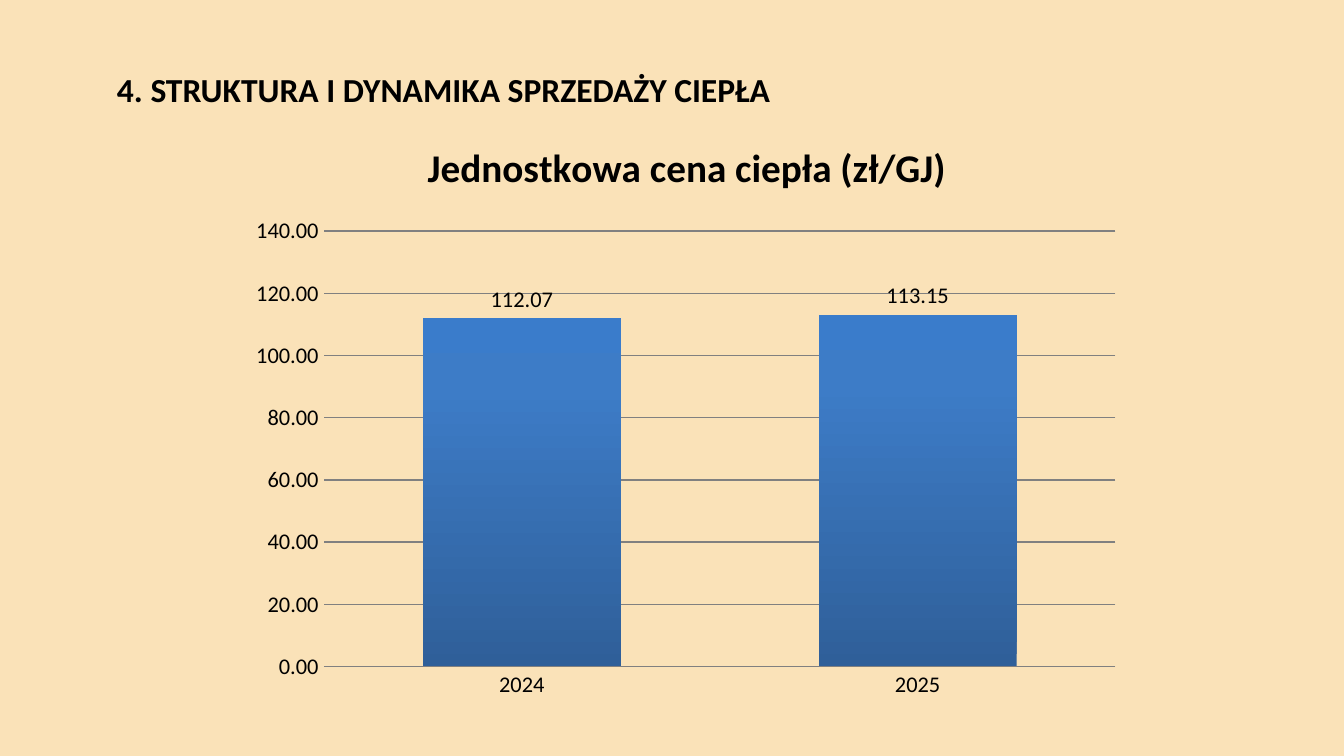
import copy

import pptx
import pptx.chart.data
import pptx.dml.color
import pptx.enum.chart
import pptx.enum.text
import pptx.oxml
import pptx.oxml.ns
import pptx.util
from pptx.util import Inches

FONT = "Calibri"
COLORS = {
    "background": "FAE2B8",
    "text": "000000",
    "line": "808080",
    "bar_bottom": "2F5F99",
    "bar_middle": "3D7CC7",
    "bar_top": "3A7CCB",
}


def color(name):
    return pptx.dml.color.RGBColor.from_string(COLORS[name])


def format_font(font, size, bold=False):
    font.name = FONT
    font.size = pptx.util.Pt(size)
    font.bold = bold
    font.color.rgb = color("text")


def format_line(line):
    line.color.rgb = color("line")
    line.width = pptx.util.Pt(0.75)


def set_layout(parent, index, **settings):
    for layout in parent.findall(pptx.oxml.ns.qn("c:layout")):
        parent.remove(layout)
    namespace = pptx.oxml.ns.nsdecls("c")
    entries = "".join(f'<c:{key} val="{value}"/>' for key, value in settings.items())
    parent.insert(index, pptx.oxml.parse_xml(
        f"<c:layout {namespace}><c:manualLayout>{entries}</c:manualLayout></c:layout>"
    ))


def add_heading(slide, left, top, width, height):
    title = slide.shapes.title
    title.left, title.top, title.width, title.height = map(
        Inches, (left, top, width, height)
    )
    frame = title.text_frame
    frame.text = "4. STRUKTURA I DYNAMIKA SPRZEDAŻY CIEPŁA"
    frame.word_wrap = True
    frame.auto_size = pptx.enum.text.MSO_AUTO_SIZE.NONE
    frame.vertical_anchor = pptx.enum.text.MSO_ANCHOR.TOP
    frame.margin_left = frame.margin_right = Inches(0.09)
    frame.margin_top = frame.margin_bottom = Inches(0.04)
    paragraph = frame.paragraphs[0]
    paragraph.alignment = pptx.enum.text.PP_ALIGN.LEFT
    format_font(paragraph.font, 18, bold=True)


def fill_bars(series):
    fill = series.format.fill
    fill.gradient()
    fill.gradient_angle = 90
    stop_list = series._element.find(".//" + pptx.oxml.ns.qn("a:gsLst"))
    stop_list.append(copy.deepcopy(stop_list[-1]))
    stops = (("bar_bottom", 0), ("bar_middle", 0.8), ("bar_top", 1))
    for stop, (name, position) in zip(fill.gradient_stops, stops):
        stop.color.rgb = color(name)
        stop.position = position


def format_axes(chart):
    for axis in (chart.category_axis, chart.value_axis):
        axis.major_tick_mark = pptx.enum.chart.XL_TICK_MARK.NONE
        axis.minor_tick_mark = pptx.enum.chart.XL_TICK_MARK.NONE
        format_font(axis.tick_labels.font, 12)
    format_line(chart.category_axis.format.line)
    value_axis = chart.value_axis
    value_axis.minimum_scale = 0
    value_axis.maximum_scale = 140
    value_axis.major_unit = 20
    value_axis.tick_labels.number_format = "0.00"
    value_axis.tick_labels.number_format_is_linked = False
    value_axis.format.line.fill.background()
    format_line(value_axis.major_gridlines.format.line)


def add_price_chart(slide, left, top, width, height):
    data = pptx.chart.data.CategoryChartData(number_format="0.00")
    data.categories = ["2024", "2025"]
    data.add_series("Series 1", (112.07, 113.15))
    chart = slide.shapes.add_chart(
        pptx.enum.chart.XL_CHART_TYPE.COLUMN_CLUSTERED,
        *map(Inches, (left, top, width, height)),
        data,
    ).chart
    chart.has_legend = False
    format_font(chart.font, 10)

    chart.has_title = True
    title_frame = chart.chart_title.text_frame
    title_frame.text = "Jednostkowa cena ciepła (zł/GJ)"
    format_font(title_frame.paragraphs[0].font, 21, bold=True)
    set_layout(
        chart.chart_title._element, 1,
        xMode="edge", yMode="edge", x=1.36 / width, y=0.15 / height,
    )
    set_layout(
        chart._chartSpace.chart.plotArea, 0,
        layoutTarget="inner", xMode="edge", yMode="edge",
        x=0.64 / width, y=0.88 / height, w=5.89 / width, h=3.24 / height,
    )

    format_axes(chart)
    plot = chart.plots[0]
    plot.gap_width = 100
    plot.overlap = -24
    plot.vary_by_categories = False
    series = plot.series[0]
    series.invert_if_negative = False
    fill_bars(series)
    labels = series.data_labels
    labels.show_value = True
    labels.number_format = "0.00"
    labels.number_format_is_linked = False
    labels.position = pptx.enum.chart.XL_LABEL_POSITION.OUTSIDE_END
    format_font(labels.font, 12)


def main():
    presentation = pptx.Presentation()
    presentation.slide_width = Inches(10)
    presentation.slide_height = presentation.slide_width * 9 // 16
    slide = presentation.slides.add_slide(presentation.slide_layouts[5])
    slide.background.fill.solid()
    slide.background.fill.fore_color.rgb = color("background")
    add_heading(slide, 0.78, 0.47, 8.5, 0.47)
    add_price_chart(slide, 1.77, 0.84, 6.67, 4.44)
    presentation.save("out.pptx")


if __name__ == "__main__":
    main()
